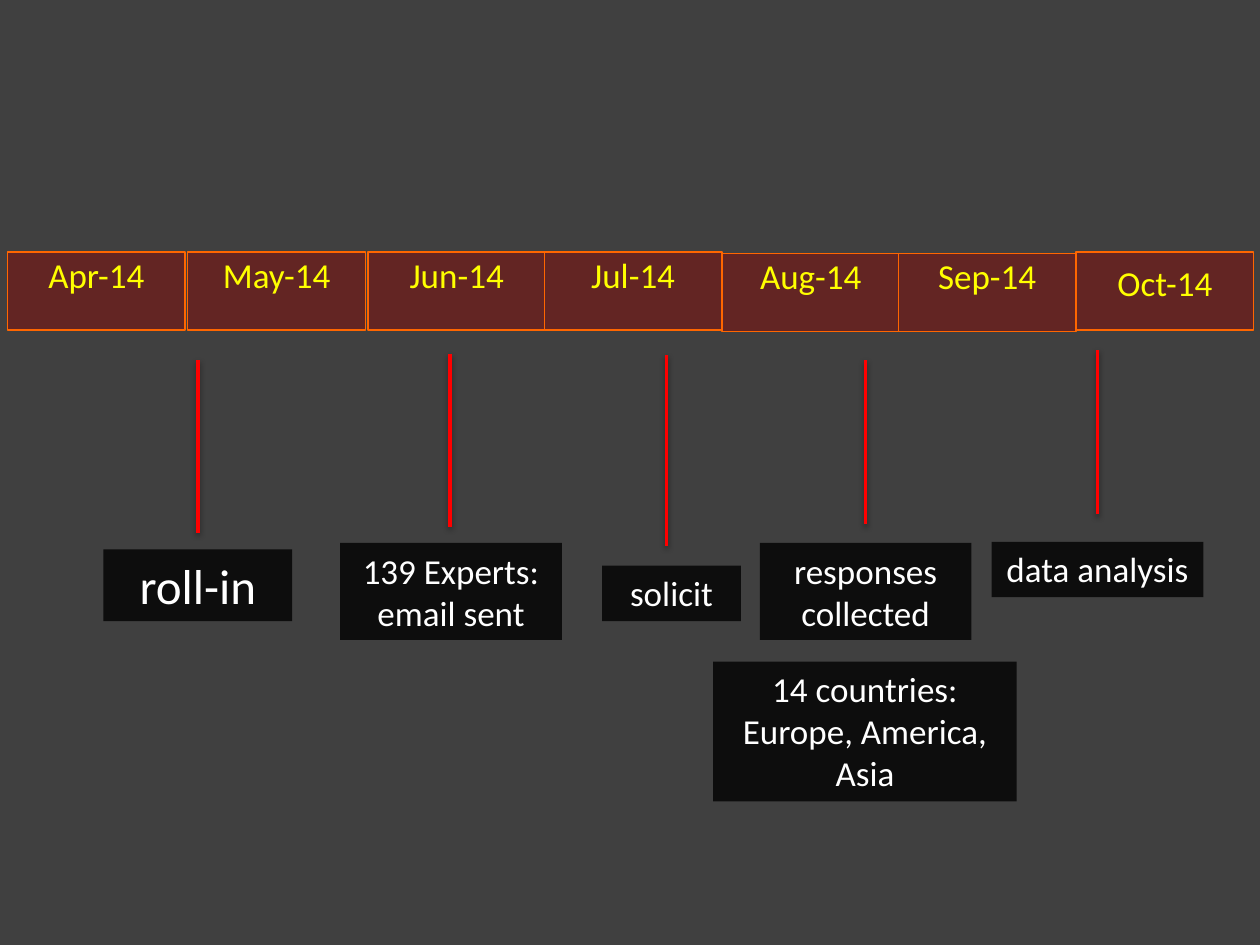
from lxml import etree
from pptx import Presentation
from pptx.dml.color import RGBColor
from pptx.enum.shapes import MSO_CONNECTOR as CONN, MSO_SHAPE as SHAPE
from pptx.enum.text import MSO_ANCHOR as ANCHOR, PP_ALIGN as ALIGN
from pptx.oxml import parse_xml
from pptx.oxml.ns import nsdecls
from pptx.util import Inches, Pt

GREY = RGBColor(0x40, 0x40, 0x40)
BLACK = RGBColor(0x0D, 0x0D, 0x0D)
WHITE = RGBColor(0xFF, 0xFF, 0xFF)
RED = RGBColor(0xFF, 0x00, 0x00)
MAROON = RGBColor(0x63, 0x25, 0x23)
ORANGE = RGBColor(0xFF, 0x66, 0x00)
YELLOW = RGBColor(0xFF, 0xFF, 0x00)

prs = Presentation()
prs.slide_width, prs.slide_height = Inches(10), Inches(7.5)
COL, ROW = prs.slide_width / 100, prs.slide_height / 75
s = prs.slides.add_slide(prs.slide_layouts[6])
s.background.fill.solid()
s.background.fill.fore_color.rgb = GREY


def add_box(text, x, y, w, h, fill=BLACK, color=WHITE, size=20, line=None,
            inset=(0.1, 0.05), spacing=None):
    sp = s.shapes.add_shape(SHAPE.RECTANGLE, int(x * COL), int(y * ROW),
                            int(w * COL), int(h * ROW))
    sp.shadow.inherit = False
    sp.fill.solid()
    sp.fill.fore_color.rgb = fill
    if line is None:
        sp.line.fill.background()
    else:
        sp.line.color.rgb = line
        sp.line.width = Pt(0.75)
    tf = sp.text_frame
    tf.word_wrap = True
    tf.vertical_anchor = ANCHOR.TOP
    tf.margin_left = tf.margin_right = Inches(inset[0])
    tf.margin_top = tf.margin_bottom = Inches(inset[1])
    p = tf.paragraphs[0]
    p.alignment = ALIGN.CENTER
    p.line_spacing = spacing
    r = p.add_run()
    r.text = text
    r.font.name = "Calibri"
    r.font.size = Pt(size)
    r.font.color.rgb = color


SHADOW = etree.fromstring(
    f'<a:effectLst {nsdecls("a")}>'
    '<a:outerShdw blurRad="40000" dist="20000" dir="5400000" rotWithShape="0">'
    '<a:srgbClr val="000000"><a:alpha val="38000"/></a:srgbClr>'
    '</a:outerShdw></a:effectLst>')

for x, top, bottom in [(15.7, 28.6, 42.3), (35.7, 28.1, 41.8), (52.9, 28.2, 43.3),
                       (68.7, 28.6, 41.6), (87.1, 27.8, 40.8)]:
    c = s.shapes.add_connector(CONN.STRAIGHT, int(x * COL), int(top * ROW),
                               int(x * COL), int(bottom * ROW))
    c.line.color.rgb = RED
    c.line.width = Pt(2)
    c._element.spPr.append(parse_xml(etree.tostring(SHADOW)))

for text, x, y, w, h, size in [
    ("roll-in", 8.2, 43.6, 15, 5.7, 28),
    ("139 Experts: email sent", 27, 43.1, 17.6, 7.7, 20),
    ("solicit", 47.8, 44.9, 11, 4.4, 20),
    ("responses collected", 60.3, 43.1, 16.8, 7.7, 20),
    ("14 countries: Europe, America, Asia", 56.6, 52.5, 24.1, 11.1, 20),
    ("data analysis", 78.7, 43, 16.8, 4.4, 20),
]:
    add_box(text, x, y, w, h, size=size)

for month, x, y, spacing in [
    ("Apr", 0.6, 20, None), ("May", 14.9, 20, None), ("Jun", 29.2, 20, None),
    ("Jul", 43.2, 20, None), ("Aug", 57.3, 20.1, None), ("Sep", 71.3, 20.1, None),
    ("Oct", 85.4, 20, 1.2),
]:
    add_box(f"{month}-14", x, y, 14.1, 6.2, fill=MAROON, color=YELLOW,
            line=ORANGE, inset=(0.02, 0.01), spacing=spacing)

prs.save("out.pptx")
